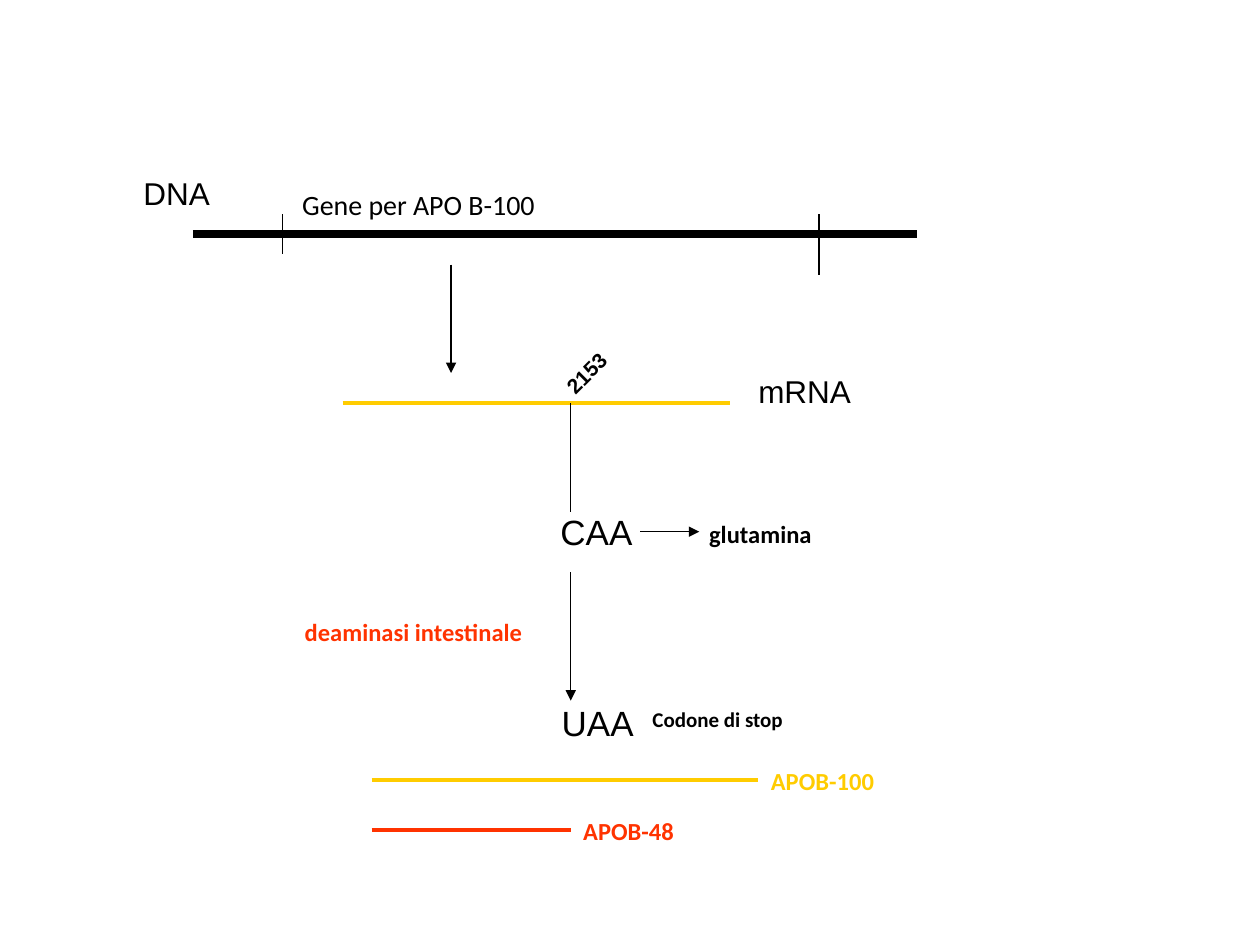
from lxml.etree import SubElement
from pptx import Presentation
from pptx.dml.color import RGBColor
from pptx.enum.shapes import MSO_CONNECTOR
from pptx.enum.text import MSO_AUTO_SIZE
from pptx.oxml.ns import qn
from pptx.util import Inches, Pt

COLORS = {"black": "000000", "yellow": "FFCC00", "red": "FF3300"}

prs = Presentation()
prs.slide_width, prs.slide_height = Inches(10), Inches(7.5)
slide = prs.slides.add_slide(prs.slide_layouts[6])

# Grid of 100 columns by 75 rows
COL = prs.slide_width / 100
ROW = prs.slide_height / 75


def add_line(x1, y1, x2, y2, color="black", width=0.75, arrow=False):
    line = slide.shapes.add_connector(
        MSO_CONNECTOR.STRAIGHT,
        round(x1 * COL), round(y1 * ROW), round(x2 * COL), round(y2 * ROW))
    line.line.color.rgb = RGBColor.from_string(COLORS[color])
    line.line.width = Pt(width)
    if arrow:
        SubElement(line.line._get_or_add_ln(), qn("a:tailEnd"), type="triangle")
    SubElement(line._element.spPr, qn("a:effectLst"))


def add_label(text, x, y, w, h, size, font="Arial", color="black",
              bold=False, angle=0):
    sp = slide.shapes.add_textbox(
        round(x * COL), round(y * ROW), round(w * COL), round(h * ROW))
    sp.rotation = angle
    tf = sp.text_frame
    tf.word_wrap = False
    tf.auto_size = MSO_AUTO_SIZE.SHAPE_TO_FIT_TEXT
    r = tf.paragraphs[0].add_run()
    r.text = text
    r.font.name, r.font.size, r.font.bold = font, Pt(size), bold
    r.font.color.rgb = RGBColor.from_string(COLORS[color])


# DNA strand with the gene boundaries
DNA_Y = 18.6
add_line(15.3, DNA_Y, 72.8, DNA_Y, width=4.5)
add_line(22.4, 17, 22.4, 20.2)
add_line(65, 17, 65, 21.8)
add_label("DNA", 10.4, 13.3, 7.3, 4, 18)
add_label("Gene per APO B-100", 23, 14.4, 23.2, 3.7, 16, "Calibri")

# Transcription to mRNA
MRNA_Y, CODON_X = 32, 45.3
add_line(35.8, 21, 35.8, 29.6, arrow=True)
add_line(27.2, MRNA_Y, 57.9, MRNA_Y, "yellow", 2.25)
add_label("mRNA", 59.2, 29, 9.4, 4, 18)
add_label("2153", 43.7, 28.1, 5.7, 3, 12, bold=True, angle=315)

# Codon and its edited form
add_line(CODON_X, MRNA_Y, CODON_X, 40.6)
add_label("CAA", 43.5, 40, 7.7, 4.3, 20)
add_line(50.8, 42.2, 55.5, 42.2, arrow=True)
add_label("glutamina", 55.3, 40.7, 10.7, 3.3, 14, "Calibri", bold=True)
add_line(CODON_X, 45.4, CODON_X, 55.6, arrow=True)
add_label("deaminasi intestinale", 23.2, 48.5, 21.5, 3.3, 14, "Calibri", "red", True)
add_label("UAA", 43.6, 55.2, 7.7, 4.3, 20)
add_label("Codone di stop", 50.8, 55.6, 13.8, 3, 12, "Calibri", bold=True)

# Resulting proteins, each labelled at its end
proteins = [("APOB-100", 60.2, 61.9, 12, "yellow"),
            ("APOB-48", CODON_X, 65.9, 10.8, "red")]
for name, end, y, w, color in proteins:
    add_line(29.5, y, end, y, color, 2.25)
    add_label(name, end, y - 1.6, w, 3.3, 14, "Calibri", color, True)

prs.save("out.pptx")
